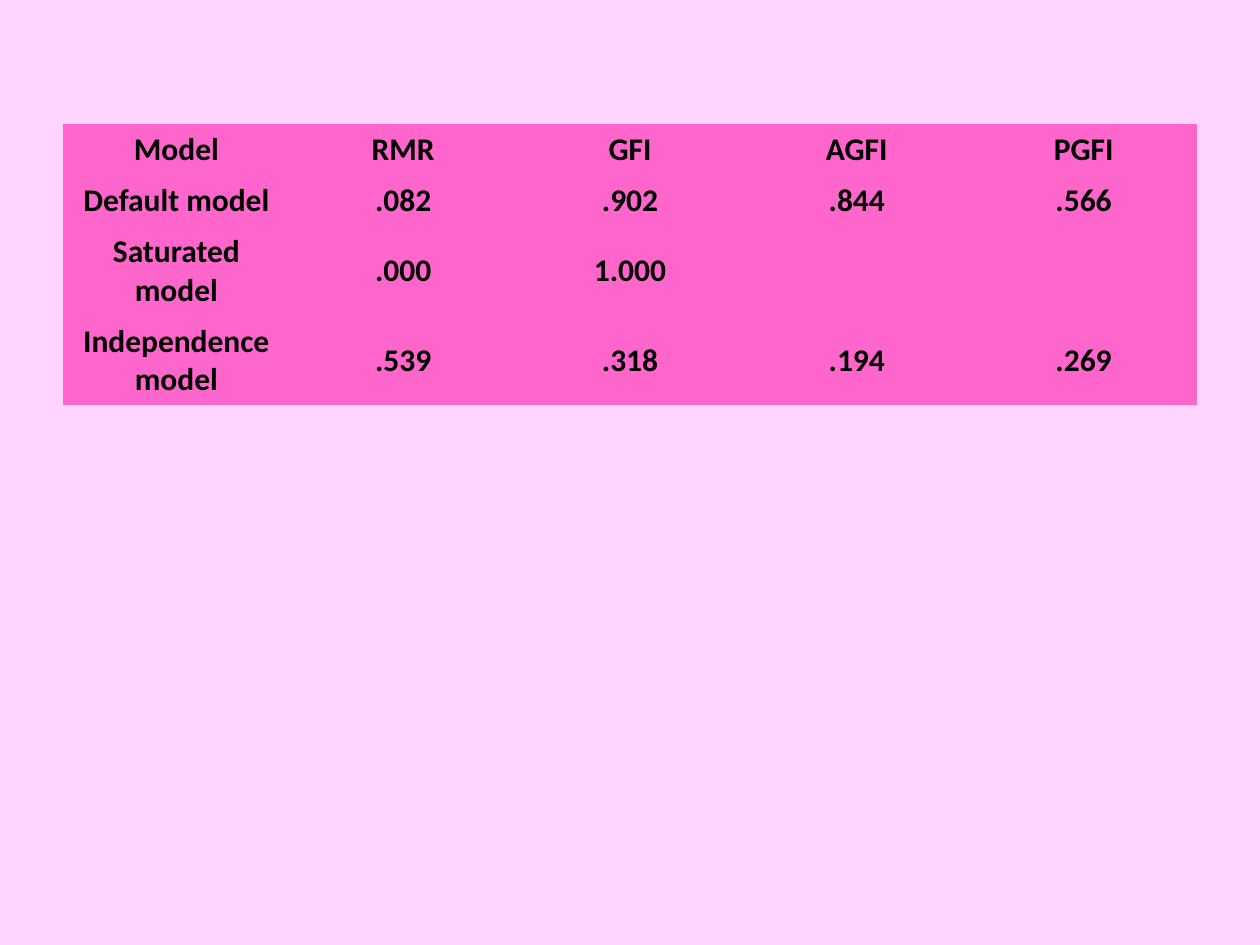
from dataclasses import dataclass

from lxml.etree import SubElement
from pptx import Presentation
from pptx.dml.color import RGBColor
from pptx.enum.text import MSO_ANCHOR as Anchor, PP_ALIGN as Align
from pptx.oxml.ns import qn
from pptx.util import Cm, Pt

BACKGROUND = "FFD5FF"
CELL_FILL = "FF66CC"
TEXT_COLOUR = "000000"
TEXT_FORMAT = {"name": "Calibri", "size": Pt(18), "bold": True}
TABLE_FORMAT = {"first_row": False, "horz_banding": False}


@dataclass
class FitRow:
    values: tuple[str, ...]
    height: float


FIT_ROWS = [
    FitRow(("Model", "RMR", "GFI", "AGFI", "PGFI"), 1.03),
    FitRow(("Default model", ".082", ".902", ".844", ".566"), 1.03),
    FitRow(("Saturated model", ".000", "1.000", "", ""), 1.8),
    FitRow(("Independence model", ".539", ".318", ".194", ".269"), 1.8),
]


def colour(value: str) -> RGBColor:
    return RGBColor.from_string(value)


def apply_format(target, values: dict) -> None:
    for name, value in values.items():
        setattr(target, name, value)


def paint(fill, value: str) -> None:
    fill.solid()
    fill.fore_color.rgb = colour(value)


def write_cell(cell, text: str) -> None:
    cell.vertical_anchor = Anchor.MIDDLE
    properties = cell._tc.get_or_add_tcPr()
    for side in ("a:lnL", "a:lnR", "a:lnT", "a:lnB"):
        SubElement(SubElement(properties, qn(side)), qn("a:noFill"))
    paint(cell.fill, CELL_FILL)
    para = cell.text_frame.paragraphs[0]
    para.alignment = Align.CENTER
    if text:
        span = para.add_run()
        span.text = text
        apply_format(span.font, TEXT_FORMAT)
        span.font.color.rgb = colour(TEXT_COLOUR)


def add_fit_table(page, rows: list[FitRow]) -> None:
    height = sum(row.height for row in rows)
    frame = page.shapes.add_table(
        len(rows), len(rows[0].values), Cm(1.27), Cm(2.5), Cm(22.86), Cm(height)
    )
    table = frame.table
    apply_format(table, TABLE_FORMAT)
    for table_row, row in zip(table.rows, rows):
        table_row.height = Cm(row.height)
        for cell, text in zip(table_row.cells, row.values):
            write_cell(cell, text)


def main() -> None:
    deck = Presentation()
    apply_format(deck, {"slide_width": Cm(25.4), "slide_height": Cm(19.05)})
    page = deck.slides.add_slide(deck.slide_layouts[6])
    paint(page.background.fill, BACKGROUND)
    add_fit_table(page, FIT_ROWS)
    deck.save("out.pptx")


if __name__ == "__main__":
    main()
